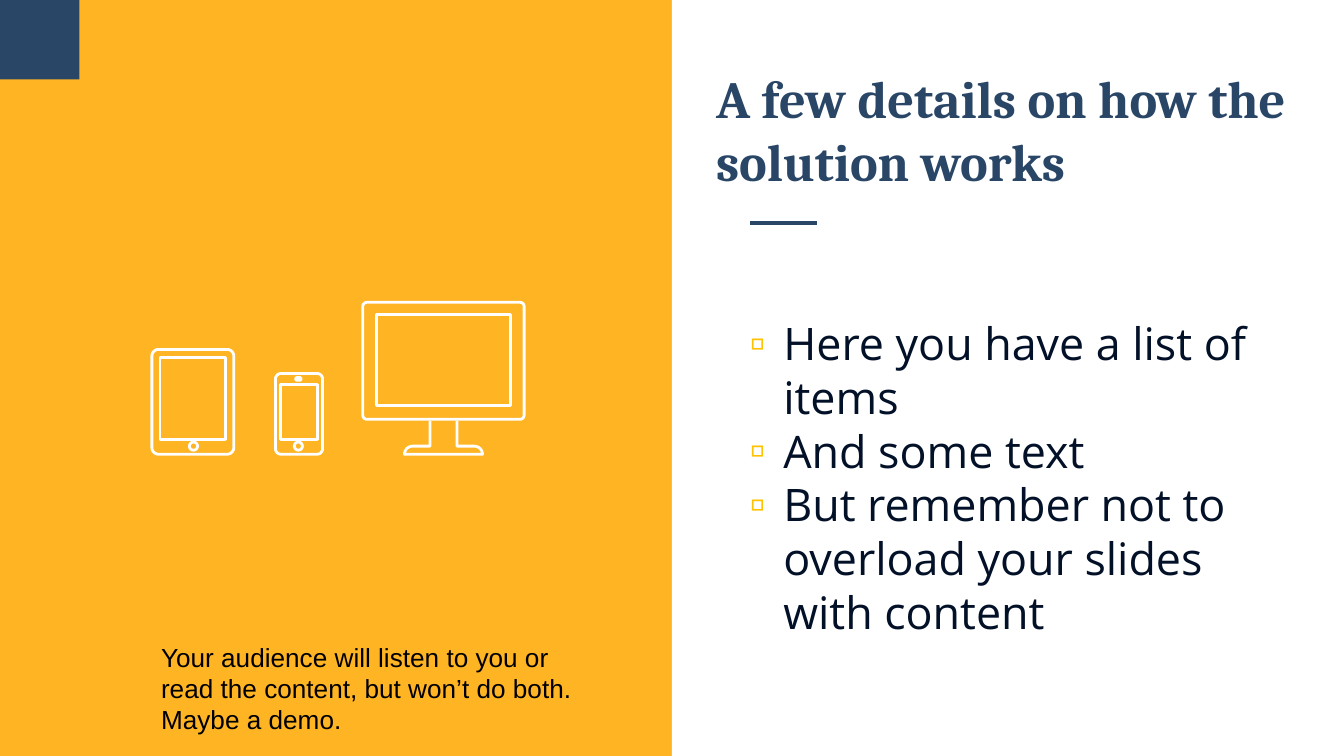
from math import cos, radians, sin

from lxml.etree import SubElement
from pptx import Presentation
from pptx.dml.color import RGBColor
from pptx.enum.shapes import MSO_CONNECTOR, MSO_SHAPE
from pptx.enum.text import MSO_ANCHOR, MSO_AUTO_SIZE
from pptx.oxml.ns import qn
from pptx.util import Inches, Pt

NAVY = RGBColor(0x29, 0x46, 0x67)
AMBER = RGBColor(0xFF, 0xA8, 0x00)
GOLD = RGBColor(0xFF, 0xC2, 0x00)
INK = RGBColor(0x02, 0x10, 0x28)
WHITE = RGBColor(0xFF, 0xFF, 0xFF)
BLACK = RGBColor(0, 0, 0)

WIDTH = 10
HEIGHT = WIDTH * 9 / 16

TITLE = {"name": "Cambria", "size": Pt(28), "bold": True}
BODY = {"name": "Open Sans", "size": Pt(24)}
CAPTION = {"name": "Arial", "size": Pt(14)}


def arc(cx, cy, r, start):
    """Points of a quarter turn, clockwise from the start angle."""
    steps = 8 if r else 0
    angles = [radians(start + 90 * i / max(steps, 1)) for i in range(steps + 1)]
    return [(cx + r * cos(a), cy + r * sin(a)) for a in angles]


def rounded(left, top, width, height, r=0):
    """Outline of a rectangle with corner radius r."""
    x1, x2 = left + r, left + width - r
    y1, y2 = top + r, top + height - r
    return (arc(x1, y1, r, 180) + arc(x2, y1, r, 270)
            + arc(x2, y2, r, 0) + arc(x1, y2, r, 90))


def circle(cx, cy, r):
    return rounded(cx - r, cy - r, 2 * r, 2 * r, r)


class SlideBuilder:
    def __init__(self, slide):
        self.slide = slide
        self.shapes = slide.shapes

    def block(self, left, top, width, height, color, opacity=None):
        sp = self.shapes.add_shape(MSO_SHAPE.RECTANGLE, Inches(left), Inches(top),
                                   Inches(width), Inches(height))
        sp.shadow.inherit = False
        sp.fill.solid()
        sp.fill.fore_color.rgb = color
        sp.line.fill.background()
        if opacity:
            clr = sp._element.spPr.find(".//" + qn("a:srgbClr"))
            SubElement(clr, qn("a:alpha"), val=str(opacity * 1000))

    def rule(self, x1, x2, y):
        line = self.shapes.add_connector(MSO_CONNECTOR.STRAIGHT, Inches(x1), Inches(y),
                                         Inches(x2), Inches(y))
        line.line.color.rgb = NAVY
        line.line.width = Pt(2.25)
        SubElement(line._element.spPr, qn("a:effectLst"))

    def icon(self, *contours, close=True):
        """White outline made of one or more contours."""
        builder = None
        for contour in contours:
            points = [(Inches(x), Inches(y)) for x, y in contour]
            if builder is None:
                builder = self.shapes.build_freeform(*points[0])
            else:
                builder.move_to(*points[0])
            builder.add_line_segments(points[1:], close=close)
        sp = builder.convert_to_shape()
        sp.shadow.inherit = False
        sp.fill.background()
        sp.line.color.rgb = WHITE
        sp.line.width = Pt(1.5)

    def text(self, left, top, width, height, lines, style, color, bullet=None, **frame):
        box = self.shapes.add_textbox(Inches(left), Inches(top),
                                      Inches(width), Inches(height))
        tf = box.text_frame
        tf.word_wrap = True
        for key, value in frame.items():
            setattr(tf, key, value)
        for i, line in enumerate(lines):
            p = tf.paragraphs[0] if i == 0 else tf.add_paragraph()
            if bullet:
                self.add_bullet(p, bullet)
            r = p.add_run()
            r.text = line
            for key, value in style.items():
                setattr(r.font, key, value)
            r.font.color.rgb = color

    def add_bullet(self, p, char):
        pPr = p._p.get_or_add_pPr()
        pPr.set("marL", str(Inches(0.5)))
        pPr.set("indent", str(Inches(-0.25)))
        clr = SubElement(pPr, qn("a:buClr"))
        SubElement(clr, qn("a:srgbClr"), val=str(GOLD))
        SubElement(pPr, qn("a:buFont"), typeface="Arial")
        SubElement(pPr, qn("a:buChar"), char=char)


def main():
    prs = Presentation()
    prs.slide_width, prs.slide_height = Inches(WIDTH), Inches(HEIGHT)
    s = SlideBuilder(prs.slides.add_slide(prs.slide_layouts[6]))
    padding = {"margin_top": Inches(0.1), "margin_bottom": Inches(0.1)}

    s.block(0, 0, WIDTH / 2, HEIGHT, AMBER, opacity=86)
    s.block(WIDTH / 2, 0, WIDTH / 2, HEIGHT, WHITE)
    s.rule(5.58, 6.08, 1.66)
    s.block(0, 0, 0.59, 0.59, NAVY)
    s.text(5.23, 0.47, 4.51, 1.06, ["A few details on how the solution works"],
           TITLE, NAVY, vertical_anchor=MSO_ANCHOR.BOTTOM, **padding)

    # Tablet, phone, monitor stand and monitor
    s.icon(rounded(1.13, 2.6, 0.61, 0.78, 0.05),
           circle(1.44, 3.32, 0.03),
           rounded(1.19, 2.66, 0.49, 0.61))
    s.icon(rounded(2.05, 2.78, 0.35, 0.6, 0.04),
           rounded(2.2, 2.81, 0.04, 0.02, 0.01),
           circle(2.22, 3.32, 0.03),
           rounded(2.09, 2.86, 0.27, 0.41))
    s.icon([(3.4, 3.13), (3.4, 3.32)] + arc(3.53, 3.38, 0.06, 270)
           + arc(3.07, 3.38, 0.06, 180) + [(3.2, 3.32), (3.2, 3.13)], close=False)
    s.icon(rounded(2.7, 2.25, 1.2, 0.87, 0.03),
           rounded(2.8, 2.34, 1, 0.68))

    s.text(1.1, 4.72, 3.5, 0.81,
           ["Your audience will listen to you or read the content, "
            "but won’t do both. Maybe a demo."],
           CAPTION, BLACK, auto_size=MSO_AUTO_SIZE.SHAPE_TO_FIT_TEXT)
    s.text(5.23, 2.25, 4.51, 2.88,
           ["Here you have a list of items",
            "And some text",
            "But remember not to overload your slides with content"],
           BODY, INK, bullet="▫", **padding)
    prs.save("out.pptx")


if __name__ == "__main__":
    main()
